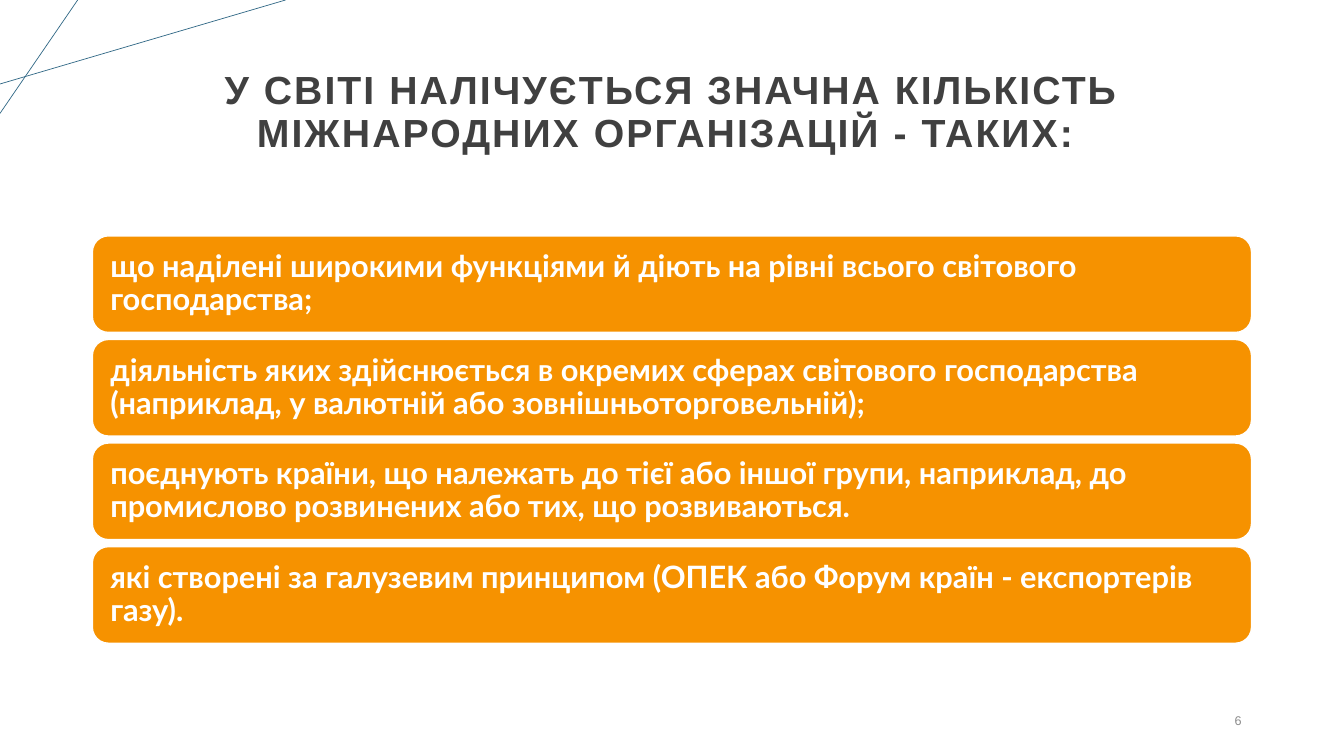
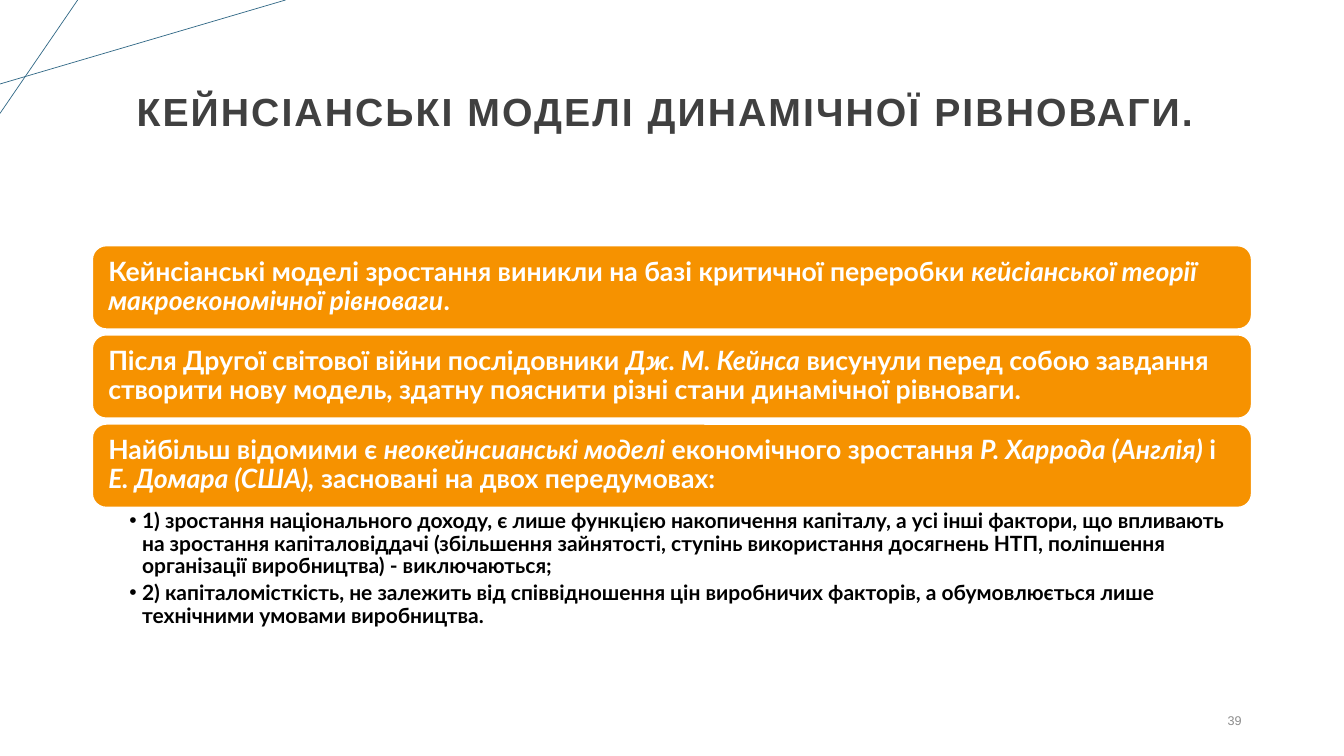
from lxml.etree import SubElement
from pptx import Presentation
from pptx.dml.color import RGBColor
from pptx.enum.shapes import MSO_CONNECTOR, MSO_SHAPE
from pptx.enum.text import MSO_ANCHOR, PP_ALIGN
from pptx.oxml.ns import qn
from pptx.util import Pt

WHITE = RGBColor(0xFF, 0xFF, 0xFF)
BLACK = RGBColor(0x00, 0x00, 0x00)
ORANGE = RGBColor(0xF6, 0x92, 0x00)
BLUE = RGBColor(0x31, 0x68, 0x86)
CHARCOAL = RGBColor(0x40, 0x40, 0x40)
GREY = RGBColor(0x8C, 0x8C, 0x8C)

LEFT, WIDTH = 66, 828
CORNER_LINES = [((0, 60), (204, 0)), ((55.5, 0), (0, 81))]

FUNCTIONS = [
    ["що наділені широкими функціями й діють на рівні всього світового господарства;"],
    ["діяльність яких здійснюється в окремих сферах світового господарства "
     "(наприклад, у валютній або зовнішньоторговельній);"],
    ["поєднують країни, що належать до тієї або іншої групи, наприклад, "
     "до промислово розвинених або тих, що розвиваються."],
    ["які створені за галузевим принципом (ОПЕК або Форум країн - експортерів газу)."],
]
MODELS = [
    ["Кейнсіанські моделі зростання виникли на базі критичної переробки ",
     "кейсіанської теорії макроекономічної рівноваги", "."],
    ["Після Другої світової війни послідовники ", "Дж. М. Кейнса",
     " висунули перед собою завдання створити нову модель, "
     "здатну пояснити різні стани динамічної рівноваги."],
    ["Найбільш відомими є ", "неокейнсианські моделі", " економічного зростання ",
     "Р. Харрода (Англія)", " і ", "Е. Домара (США),", " засновані на двох передумовах:"],
]
PREMISES = [
    ["1) зростання національного доходу, є лише функцією накопичення капіталу, "
     "а усі інші фактори, що впливають на зростання капіталовіддачі "
     "(збільшення зайнятості, ступінь використання досягнень НТП, "
     "поліпшення організації виробництва) - виключаються;"],
    ["2) капіталомісткість, не залежить від співвідношення цін виробничих факторів, "
     "а обумовлюється лише технічними умовами виробництва."],
]


def write(shape, paragraphs, size, color, font="Lato", bold=True, align=PP_ALIGN.LEFT,
          anchor=MSO_ANCHOR.MIDDLE, insets=(7.2, 3.6, 7.2, 3.6), line=0.9, after=0,
          tracking=None, bullet=None):
    """Fill a shape with paragraphs, each a list of spans that alternate upright and italic."""
    frame = shape.text_frame
    frame.word_wrap = True
    frame.vertical_anchor = anchor
    frame.margin_left, frame.margin_top, frame.margin_right, frame.margin_bottom = map(Pt, insets)
    for index, spans in enumerate(paragraphs):
        para = frame.add_paragraph() if index else frame.paragraphs[0]
        para.alignment = align
        para.line_spacing = line
        para.space_after = Pt(after)
        if bullet:
            properties = para._p.get_or_add_pPr()
            properties.set("marL", str(Pt(9)))
            properties.set("indent", str(Pt(-9)))
            SubElement(properties, qn("a:buFont"), typeface="Arial")
            SubElement(properties, qn("a:buChar"), char=bullet)
        for position, text in enumerate(spans):
            span = para.add_run()
            span.text = text
            span.font.name, span.font.size = font, Pt(size)
            span.font.bold, span.font.italic = bold, position % 2 == 1
            span.font.color.rgb = color
            if tracking:
                span._r.get_or_add_rPr().set("spc", str(int(tracking * 100)))


class Deck:
    """Hold the shared style and the current page."""

    def __init__(self):
        """Start an empty widescreen presentation."""
        self.file = Presentation()
        self.file.slide_width, self.file.slide_height = Pt(960), Pt(540)
        self.page = None

    def add_page(self, title, number):
        """Start a page with corner lines, a title and a page number."""
        self.page = self.file.slides.add_slide(self.file.slide_layouts[6])
        for start, end in CORNER_LINES:
            self.add_line(start, end)
        self.add_text(LEFT, 29, WIDTH, 104, [[title]], size=28, color=CHARCOAL,
                      font="Arial", align=PP_ALIGN.CENTER, tracking=1.5)
        self.add_text(678, 500.5, 216, 28.5, [[str(number)]], size=9, color=GREY,
                      font="Arial", bold=False, align=PP_ALIGN.RIGHT, line=1.0)

    def add_line(self, start, end):
        """Draw a thin blue line."""
        line = self.page.shapes.add_connector(
            MSO_CONNECTOR.STRAIGHT, *map(Pt, start), *map(Pt, end))
        line.line.color.rgb = BLUE
        line.line.width = Pt(0.5)
        SubElement(line._element.spPr, qn("a:effectLst"))

    def add_text(self, left, top, width, height, paragraphs, **style):
        """Place a text box."""
        box = self.page.shapes.add_textbox(*map(Pt, (left, top, width, height)))
        write(box, paragraphs, **style)

    def add_bars(self, items, top, height, pitch, size, inset):
        """Stack rounded orange bars at an even pitch."""
        for index, spans in enumerate(items):
            bar = self.page.shapes.add_shape(
                MSO_SHAPE.ROUNDED_RECTANGLE,
                *map(Pt, (LEFT, top + index * pitch, WIDTH, height)))
            bar.shadow.inherit = False
            bar.fill.solid()
            bar.fill.fore_color.rgb = ORANGE
            bar.line.color.rgb = WHITE
            bar.line.width = Pt(1)
            write(bar, [spans], size=size, color=WHITE, insets=(inset,) * 4)

    def add_bullets(self, top, height, items):
        """Place a bulleted list under the bars."""
        self.add_text(LEFT, top, WIDTH, height, items, size=15, color=BLACK,
                      anchor=MSO_ANCHOR.TOP, insets=(26.5, 2, 11, 2), after=3, bullet="•")


def main():
    """Build and save both pages."""
    deck = Deck()
    deck.add_page("У СВІТІ НАЛІЧУЄТЬСЯ ЗНАЧНА КІЛЬКІСТЬ МІЖНАРОДНИХ ОРГАНІЗАЦІЙ - ТАКИХ: ", 6)
    deck.add_bars(FUNCTIONS, top=168.5, height=69, pitch=74, size=22, inset=9.5)
    deck.add_page("КЕЙНСІАНСЬКІ МОДЕЛІ ДИНАМІЧНОЇ РІВНОВАГИ. ", 39)
    deck.add_bars(MODELS, top=175.5, height=59.5, pitch=63.7, size=19, inset=8.5)
    deck.add_bullets(top=362.5, height=90, items=PREMISES)
    deck.file.save("out.pptx")


if __name__ == "__main__":
    main()
